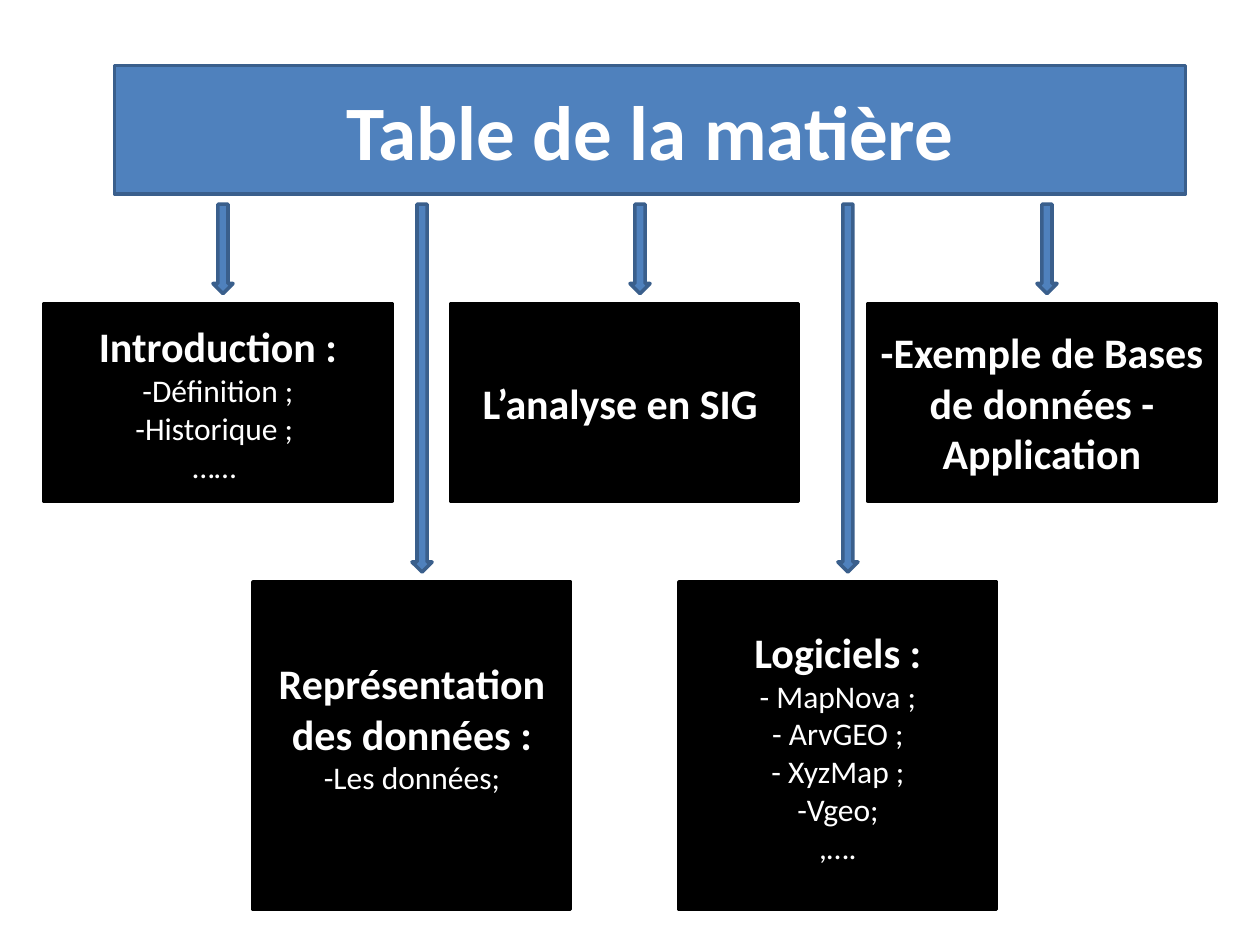
"""Build a table-of-contents slide with five topics in two staggered rows."""
import pptx
import pptx.dml.color
import pptx.enum.shapes
import pptx.enum.text
import pptx.util

Inches, Pt = pptx.util.Inches, pptx.util.Pt
SHAPES = pptx.enum.shapes.MSO_SHAPE

TITLE = "Table de la matière"
BLUE, BLUE_EDGE, BLACK, WHITE = "4F81BD", "3A5F8C", "000000", "FFFFFF"
ARROW_TOP, ARROW_WIDTH, ARROW_GAP = 1.62, 0.16, 0.08
ROWS = {
    "upper": {"top": 2.41, "width": 2.76, "height": 1.57},
    "lower": {"top": 4.62, "width": 2.52, "height": 2.6},
}
TOPICS = [
    {"row": "upper", "left": 0.35, "arrow": 1.69, "heading": "Introduction :",
     "items": ["-Définition ;", "-Historique ; ", "…… "]},
    {"row": "lower", "left": 2.01, "arrow": 3.27, "heading": "Représentation des données :",
     "items": ["-Les données;"], "bottom": 0.35},
    {"row": "upper", "left": 3.58, "arrow": 5, "heading": "L’analyse en SIG ", "items": []},
    {"row": "lower", "left": 5.39, "arrow": 6.65, "heading": "Logiciels :",
     "items": ["- MapNova ;", "- ArvGEO ;", "- XyzMap ;", "-Vgeo;", ",…."]},
    {"row": "upper", "left": 6.89, "arrow": 8.23,
     "heading": "-Exemple de Bases de données - Application", "items": []},
]


def color(value):
    return pptx.dml.color.RGBColor.from_string(value)


def paint(shape, fill, edge):
    shape.fill.solid()
    shape.fill.fore_color.rgb = color(fill)
    shape.line.color.rgb = color(edge)
    shape.line.width = Pt(2)


def add_block(page, kind, left, top, width, height, fill, edge):
    shape = page.shapes.add_shape(kind, Inches(left), Inches(top), Inches(width), Inches(height))
    shape.shadow.inherit = False
    paint(shape, fill, edge)
    return shape


def write(para, text, size=18, bold=False):
    para.alignment = pptx.enum.text.PP_ALIGN.CENTER
    span = para.add_run()
    span.text = text
    span.font.name = "Calibri"
    span.font.size = Pt(size)
    span.font.bold = bold
    span.font.color.rgb = color(WHITE)


def add_title(page):
    title = page.shapes.title
    title.left, title.top = Inches(0.91), Inches(0.52)
    title.width, title.height = Inches(8.5), Inches(1.02)
    paint(title, BLUE, BLUE_EDGE)
    title.text_frame.vertical_anchor = pptx.enum.text.MSO_ANCHOR.MIDDLE
    write(title.text_frame.paragraphs[0], TITLE, size=44, bold=True)


def add_topic(page, topic):
    row = ROWS[topic["row"]]
    box = add_block(page, SHAPES.RECTANGLE, topic["left"], row["top"],
                    row["width"], row["height"], BLACK, BLACK)
    frame = box.text_frame
    frame.word_wrap = True
    frame.vertical_anchor = pptx.enum.text.MSO_ANCHOR.MIDDLE
    frame.margin_bottom = Inches(topic.get("bottom", 0.05))
    write(frame.paragraphs[0], topic["heading"], size=24, bold=True)
    for item in topic["items"]:
        write(frame.add_paragraph(), item)
    add_block(page, SHAPES.DOWN_ARROW, topic["arrow"], ARROW_TOP, ARROW_WIDTH,
              row["top"] - ARROW_GAP - ARROW_TOP, BLUE, BLUE_EDGE)


def main():
    deck = pptx.Presentation()
    deck.slide_width, deck.slide_height = Inches(10), Inches(7.5)
    page = deck.slides.add_slide(deck.slide_layouts[0])
    subtitle = page.placeholders[1].element
    subtitle.getparent().remove(subtitle)
    add_title(page)
    for topic in TOPICS:
        add_topic(page, topic)
    deck.save("out.pptx")


if __name__ == "__main__":
    main()
